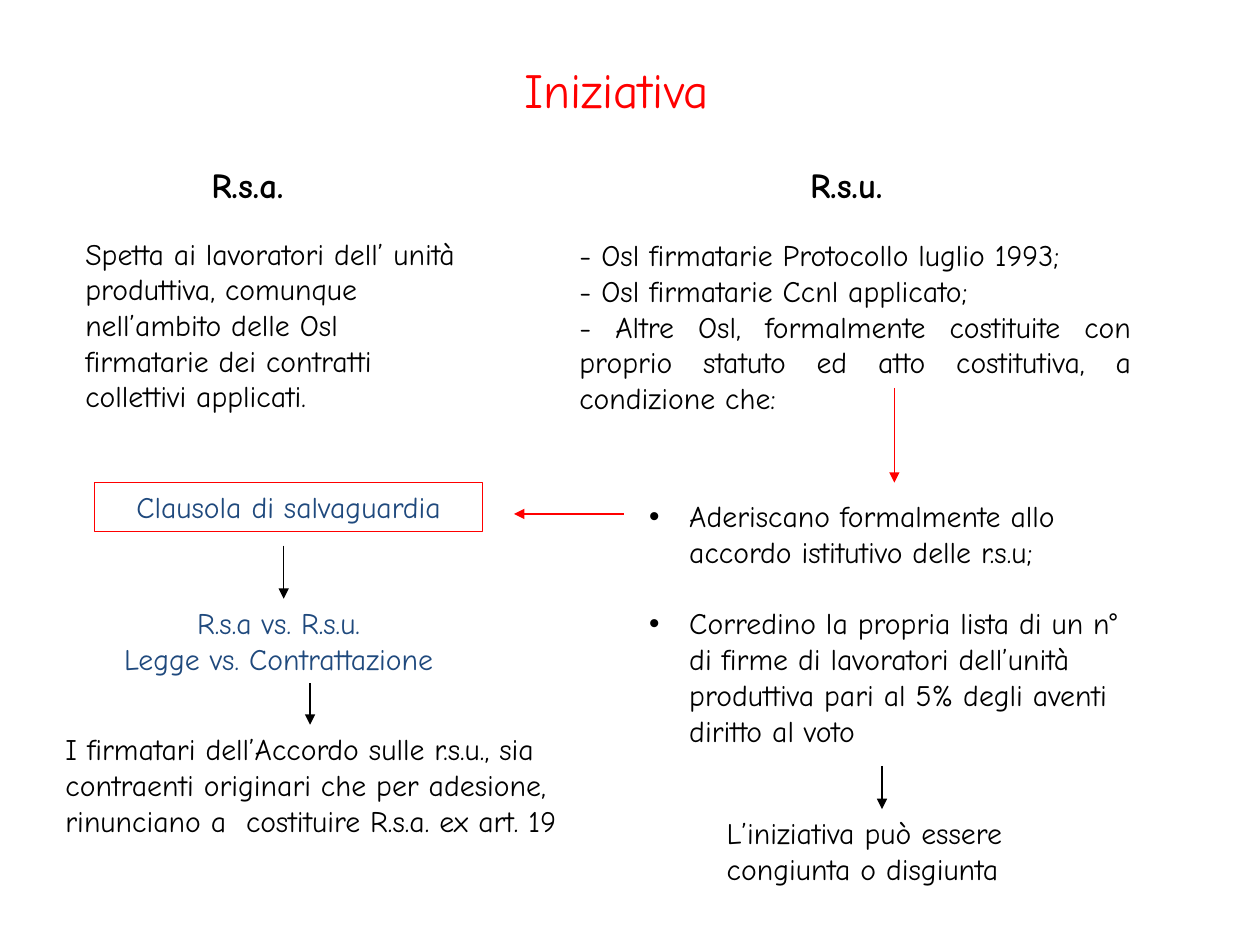
from pptx import Presentation
from pptx.dml.color import RGBColor
from pptx.enum.shapes import MSO_CONNECTOR as Connector, MSO_SHAPE as Shape
from pptx.enum.text import MSO_ANCHOR as Anchor, MSO_AUTO_SIZE as AutoSize, PP_ALIGN as Align
from pptx.oxml.ns import qn
from pptx.util import Cm, Pt
from lxml.etree import SubElement

RED = RGBColor(0xFF, 0x00, 0x00)
BLUE = RGBColor(0x1F, 0x49, 0x7D)
BLACK = RGBColor(0x00, 0x00, 0x00)
FONT = "Comic Neue"


def write(box, lines, size=17, color=BLACK, bold=False, align=Align.LEFT, gap=0, hanging=None):
    frame = box.text_frame
    frame.word_wrap = True
    frame.auto_size = AutoSize.NONE
    frame.vertical_anchor = Anchor.TOP
    for index, line in enumerate(lines):
        para = frame.add_paragraph() if index else frame.paragraphs[0]
        para.alignment = align
        para.space_before = Pt(gap if index else 0)
        if hanging:
            properties = para._p.get_or_add_pPr()
            properties.set("marL", str(hanging))
            properties.set("indent", str(-hanging))
        span = para.add_run()
        span.text = line
        span.font.name = FONT
        span.font.size = Pt(size)
        span.font.bold = bold
        span.font.color.rgb = color


deck = Presentation()
deck.slide_width, deck.slide_height = Cm(25.4), Cm(19.05)
slide = deck.slides.add_slide(deck.slide_layouts[1])

title = slide.shapes.title
title.left, title.top, title.width, title.height = Cm(10.31), Cm(1.07), Cm(4.9), Cm(1.45)
write(title, ["Iniziativa"], size=28, color=RED)

conditions = slide.placeholders[1]
conditions.left, conditions.top = Cm(12.83), Cm(9.91)
conditions.width, conditions.height = Cm(10.46), Cm(5.33)
write(conditions, [
    "Aderiscano formalmente allo accordo istitutivo delle r.s.u;",
    "Corredino la propria lista di un n° di firme di lavoratori dell’unità "
    "produttiva pari al 5% degli aventi diritto al voto",
], gap=20.5, hanging=Cm(0.81))

for heading, left in (("R.s.a.", 4.01), ("R.s.u.", 16.08)):
    box = slide.shapes.add_textbox(Cm(left), Cm(3.18), Cm(2.6), Cm(1.09))
    write(box, [heading], size=20, bold=True)

passages = [
    (1.47, 4.62, 8.05, 3.86, BLACK, Align.LEFT, [
        "Spetta ai lavoratori dell’ unità produttiva, comunque nell’ambito "
        "delle Osl firmatarie dei contratti collettivi applicati."]),
    (11.43, 4.65, 11.63, 3.86, BLACK, Align.JUSTIFY, [
        "- Osl firmatarie Protocollo luglio 1993;",
        "- Osl firmatarie Ccnl applicato;",
        "- Altre Osl, formalmente costituite con proprio statuto ed atto "
        "costitutiva, a condizione che:"]),
    (1.91, 12.07, 7.42, 1.7, BLUE, Align.CENTER, [
        "R.s.a vs. R.s.u.", "Legge vs. Contrattazione"]),
    (1.07, 14.61, 10.85, 3.18, BLACK, Align.LEFT, [
        "I firmatari dell’Accordo sulle r.s.u., sia contraenti originari che "
        "per adesione, rinunciano a  costituire R.s.a. ex art. 19"]),
    (14.4, 16.31, 6.96, 1.73, BLACK, Align.LEFT, [
        "L’iniziativa può essere congiunta o disgiunta"]),
]
for left, top, width, height, color, align, lines in passages:
    box = slide.shapes.add_textbox(Cm(left), Cm(top), Cm(width), Cm(height))
    write(box, lines, color=color, align=align)

clause = slide.shapes.add_shape(Shape.RECTANGLE, Cm(1.91), Cm(9.73), Cm(7.82), Cm(0.99))
clause.shadow.inherit = False
clause.fill.background()
clause.line.color.rgb = RED
clause.line.width = Pt(0.75)
write(clause, ["Clausola di salvaguardia"], color=BLUE, align=Align.CENTER)

arrows = [
    (5.72, 11, 5.72, 12.07, BLACK),
    (6.25, 13.77, 6.25, 14.61, BLACK),
    (12.57, 10.36, 10.36, 10.36, RED),
    (18.03, 7.82, 18.03, 9.73, RED),
    (17.78, 15.44, 17.78, 16.31, BLACK),
]
for *ends, color in arrows:
    arrow = slide.shapes.add_connector(Connector.STRAIGHT, *map(Cm, ends))
    arrow.line.color.rgb = color
    arrow.line.width = Pt(0.75)
    SubElement(arrow.line._get_or_add_ln(), qn("a:tailEnd"), type="triangle")
    SubElement(arrow._element.spPr, qn("a:effectLst"))

deck.save("out.pptx")
